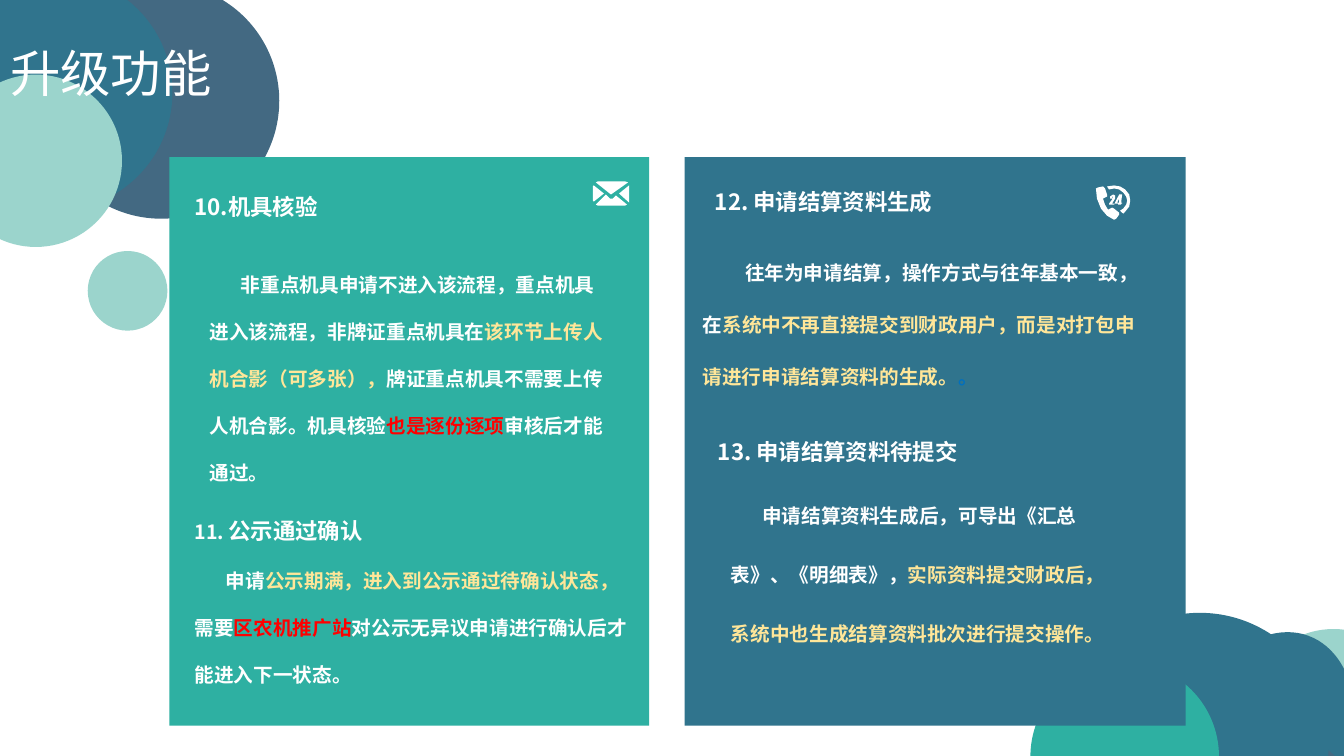
from dataclasses import dataclass

from lxml import etree
from pptx import Presentation
from pptx.dml.color import RGBColor
from pptx.enum.shapes import MSO_SHAPE
from pptx.enum.text import MSO_ANCHOR, PP_ALIGN
from pptx.oxml.ns import qn
from pptx.util import Inches, Pt

OVAL, RECTANGLE = MSO_SHAPE.OVAL, MSO_SHAPE.RECTANGLE
LEFT, TOP = PP_ALIGN.LEFT, MSO_ANCHOR.TOP


@dataclass(frozen=True)
class Theme:
    """Colours, font and type sizes of the deck."""
    font: str = "Noto Sans CJK SC"
    white: str = "FFFFFF"
    mint: str = "9BD4CC"
    teal: str = "2EB0A2"
    blue: str = "30748D"
    slate: str = "436982"
    yellow: str = "FFE699"
    red: str = "FF0000"
    azure: str = "0070C0"
    title: int = 36
    heading: int = 16
    body: int = 14


THEME = Theme()

CIRCLES = [
    (0.87, 2.49, 0.79, 0.79, 0, THEME.mint),
    (0.43, -0.17, 2.34, 2.34, 0, THEME.slate),
    (-0.63, -0.25, 2.34, 2.34, 0, THEME.blue),
    (-0.5, 0.74, 1.71, 1.71, 0, THEME.mint),
    (12.4, 6.24, 1.65, 1.65, 0, THEME.mint),
    (11.39, 6.59, 2.36, 1.65, 110.1, THEME.blue),
    (11.07, 7.14, 2.56, 2.56, 0, THEME.slate),
    (10.62, 6.08, 2.56, 2.56, 0, THEME.blue),
    (10.22, 6.57, 1.87, 1.87, 0, THEME.teal),
]

# Icon outlines are in hundredths of an inch.
ENVELOPE = [
    [(593, 180), (620, 180), (623, 181), (606, 193), (591, 181)],
    [(624, 184), (614, 192), (624, 201)],
    [(622, 203), (620, 204), (593, 204), (591, 203), (601, 193),
     (605, 197), (608, 197), (611, 194)],
    [(589, 200), (599, 192), (589, 184), (588, 185), (588, 199)],
]
PHONE = [
    [(1107, 217), (1110, 213), (1110, 211), (1105, 207), (1103, 206),
     (1099, 208), (1096, 203), (1094, 197), (1098, 195), (1098, 193),
     (1096, 187), (1094, 185), (1089, 186), (1087, 187), (1088, 197),
     (1092, 207), (1098, 214), (1105, 218)],
    [(1105, 203), (1100, 203), (1100, 202), (1103, 198), (1104, 195),
     (1103, 195), (1103, 197), (1101, 197), (1101, 195), (1104, 193),
     (1106, 194), (1106, 197), (1103, 202), (1106, 202)],
    [(1113, 202), (1112, 202), (1112, 203), (1109, 203), (1109, 202),
     (1106, 202), (1106, 201), (1110, 193), (1113, 193), (1112, 201),
     (1113, 201)],
    [(1110, 201), (1108, 201), (1110, 197)],
    [(1105, 184), (1111, 185), (1116, 188), (1120, 193), (1121, 199),
     (1120, 205), (1116, 210), (1114, 212), (1111, 209), (1114, 207),
     (1117, 203), (1118, 199), (1117, 195), (1114, 191), (1110, 188),
     (1105, 187), (1100, 188), (1098, 185)],
]

HEADINGS = [
    ("10.机具核验", (1.93, 1.92, 3.18, 0.32), {}),
    ("12. 申请结算资料生成", (7.09, 1.87, 2.18, 0.54), {"wrap": True}),
    ("13. 申请结算资料待提交", (7.12, 4.35, 3.18, 0.32), {}),
]

BODIES = [
    ((2.08, 2.47, 3.96, 2.36), 2, 0.31, [
        ("非重点机具申请不进入该流程，重点机具进入该流程，非牌证重点机具在", THEME.white),
        ("该环节上传人机合影（可多张），", THEME.yellow),
        ("牌证重点机具不需要上传人机合影。机具核验", THEME.white),
        ("也是逐份逐项", THEME.red),
        ("审核后才能通过。", THEME.white)]),
    ((6.97, 2.31, 4.34, 1.6), 2.2, 0.42, [
        ("往年为申请结算，操作方式与往年基本一致，在", THEME.white),
        ("系统中不再直接提交到财政用户，而是对打包申请进行申请结算资料的生成。", THEME.yellow),
        ("。", THEME.azure)]),
    ((7.25, 4.65, 3.8, 1.77), 2.5, 0.31, [
        ("申请结算资料生成后，可导出《汇总表》、《明细表》，", THEME.white),
        ("实际资料提交财政后，系统中也生成结算资料批次进行提交操作。", THEME.yellow)]),
    ((1.93, 5.41, 4.38, 1.47), 2, 0.31, [
        ("申请", THEME.white),
        ("公示期满，进入到公示通过待确认状态，", THEME.yellow),
        ("需要", THEME.white),
        ("区农机推广站", THEME.red),
        ("对公示无异议申请进行确认后才能进入下一状态。", THEME.white)]),
]


def paint(shape, color):
    """Give a shape a flat fill without line or shadow."""
    shape.shadow.inherit = False
    shape.fill.solid()
    shape.fill.fore_color.rgb = RGBColor.from_string(color)
    shape.line.fill.background()


def add_block(page, kind, bounds, color, turn=0):
    """Add a flat preset shape."""
    block = page.shapes.add_shape(kind, *map(Inches, bounds))
    block.rotation = turn
    paint(block, color)


def add_icon(page, outlines):
    """Add a white icon made of closed outlines."""
    builder = page.shapes.build_freeform(*outlines[0][0], scale=Inches(0.01))
    for index, outline in enumerate(outlines):
        if index:
            builder.move_to(*outline[0])
        builder.add_line_segments(outline[1:], close=True)
    paint(builder.convert_to_shape(), THEME.white)


def add_span(para, text, size=THEME.body, color=THEME.white, bold=True):
    """Append one formatted run to a paragraph."""
    span = para.add_run()
    span.text = text
    span.font.size = Pt(size)
    span.font.bold = bold
    span.font.color.rgb = RGBColor.from_string(color)
    span.font.name = THEME.font
    east_asian = etree.SubElement(span.font._element, qn("a:ea"))
    east_asian.set("typeface", THEME.font)


def prepare_frame(box, wrap, margin_x=0, margin_y=0):
    """Set wrapping and margins of a box and return its first paragraph."""
    frame = box.text_frame
    frame.word_wrap = wrap
    frame.vertical_anchor = TOP
    frame.margin_left = frame.margin_right = Inches(margin_x)
    frame.margin_top = frame.margin_bottom = Inches(margin_y)
    para = frame.paragraphs[0]
    para.alignment = LEFT
    return para


def add_text(page, bounds, spans, wrap=False, spacing=1, indent=0):
    """Add a text box holding one paragraph of formatted spans."""
    box = page.shapes.add_textbox(*map(Inches, bounds))
    para = prepare_frame(box, wrap)
    para.line_spacing = float(spacing)
    para._p.get_or_add_pPr().set("indent", str(Inches(indent)))
    for text, style in spans:
        add_span(para, text, **style)


def set_title(page, text):
    """Fill the title placeholder and bring it to the front."""
    title = page.shapes.title
    title.left, title.top, title.width, title.height = map(Inches, (0.03, 0.38, 2.17, 0.68))
    para = prepare_frame(title, False, 0.07, 0.04)
    para.line_spacing = 1.0
    add_span(para, text, size=THEME.title, bold=False)
    page.shapes._spTree.append(title._element)


def main():
    """Build the slide and save it."""
    deck = Presentation()
    deck.slide_width, deck.slide_height = Inches(13.33), Inches(7.5)
    page = deck.slides.add_slide(deck.slide_layouts[5])
    for *bounds, turn, color in CIRCLES:
        add_block(page, OVAL, bounds, color, turn)
    add_block(page, RECTANGLE, (1.68, 1.56, 4.76, 5.64), THEME.teal)
    add_block(page, RECTANGLE, (6.79, 1.56, 4.97, 5.64), THEME.blue)
    for icon in (ENVELOPE, PHONE):
        add_icon(page, icon)
    set_title(page, "升级功能")
    for text, bounds, options in HEADINGS:
        add_text(page, bounds, [(text, {"size": THEME.heading})], **options)
    add_text(page, (1.93, 5.13, 2.9, 0.28),
             [("11. ", {}), ("公示通过确认", {"size": THEME.heading})])
    for bounds, spacing, indent, spans in BODIES:
        styled = [(text, {"color": color}) for text, color in spans]
        add_text(page, bounds, styled, wrap=True, spacing=spacing, indent=indent)
    deck.save("out.pptx")


if __name__ == "__main__":
    main()
